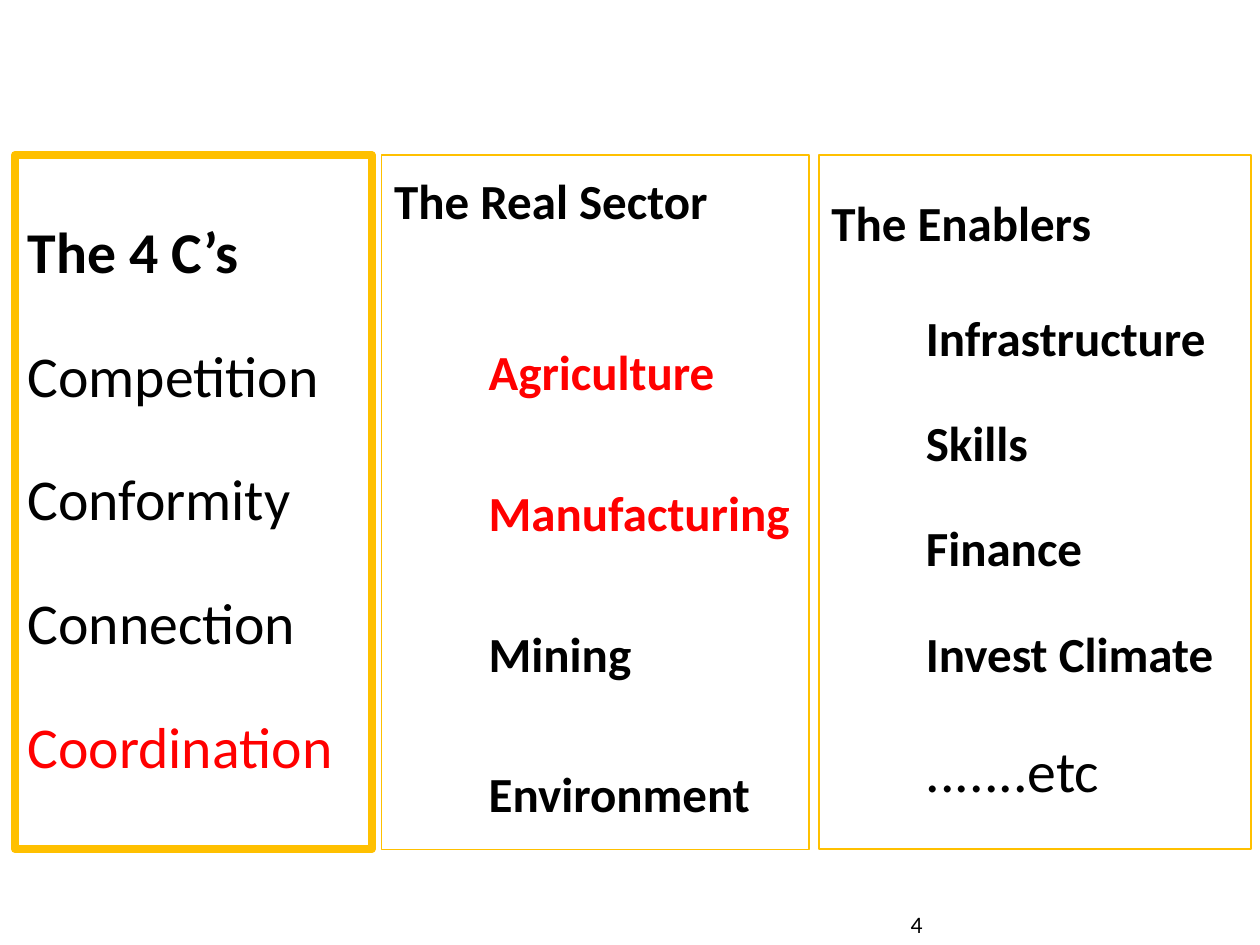
from pptx import Presentation
from pptx.dml.color import RGBColor
from pptx.enum import shapes, text
from pptx.util import Pt

COLORS = {"white": "FFFFFF", "gold": "FFC000", "black": "000000", "red": "FF0000"}
FONT = "Calibri"
TOP, HEIGHT = 88.56, 396.72
INDENT = 54

columns = [
    {"left": 8.64, "width": 203.76, "border": 4.5, "spacing": 0.9, "lines": [
        ("The 4 C’s", 33, True, "black", 0, 0),
        ("Competition", 33, False, "black", 0, 35),
        ("Conformity", 33, False, "black", 0, 35),
        ("Connection", 33, False, "black", 0, 35),
        ("Coordination", 33, False, "red", 0, 35)]},
    {"left": 218.16, "width": 244.08, "border": 0.75, "spacing": 0.8, "lines": [
        ("The Real Sector", 28, True, "black", 0, 0),
        ("Agriculture", 28, True, "red", INDENT, 71),
        ("Manufacturing", 28, True, "red", INDENT, 53.5),
        ("Mining", 28, True, "black", INDENT, 53.5),
        ("Environment", 28, True, "black", INDENT, 53.5)]},
    {"left": 468, "width": 246.96, "border": 1, "spacing": 0.9, "lines": [
        ("The Enablers", 28, True, "black", 0, 0),
        ("Infrastructure", 28, True, "black", INDENT, 35),
        ("Skills", 28, True, "black", INDENT, 30),
        ("Finance", 28, True, "black", INDENT, 30),
        ("Invest Climate", 28, True, "black", INDENT, 30),
        (".......etc", 33, False, "black", INDENT, 34)]},
]


def style(para, size, bold, color):
    for span in para.runs:
        span.font.name = FONT
        span.font.size = Pt(size)
        span.font.bold = bold
        span.font.color.rgb = RGBColor.from_string(COLORS[color])


deck = Presentation()
deck.slide_width, deck.slide_height = Pt(720), Pt(540)
page = deck.slides.add_slide(deck.slide_layouts[6])

number = page.shapes.add_textbox(Pt(513.36), Pt(516.24), Pt(175.68), Pt(37.44))
number.text_frame.word_wrap = True
number.text_frame.text = "4"
style(number.text_frame.paragraphs[0], 13.5, False, "black")

for column in columns:
    box = page.shapes.add_shape(
        shapes.MSO_SHAPE.RECTANGLE,
        Pt(column["left"]), Pt(TOP), Pt(column["width"]), Pt(HEIGHT))
    box.shadow.inherit = False
    box.fill.solid()
    box.fill.fore_color.rgb = RGBColor.from_string(COLORS["white"])
    box.line.color.rgb = RGBColor.from_string(COLORS["gold"])
    box.line.width = Pt(column["border"])
    frame = box.text_frame
    frame.word_wrap = True
    frame.vertical_anchor = text.MSO_ANCHOR.MIDDLE
    frame.text = "\n".join(line[0] for line in column["lines"])
    for para, line in zip(frame.paragraphs, column["lines"]):
        wording, size, bold, color, indent, gap = line
        para.alignment = text.PP_ALIGN.LEFT
        para.line_spacing = column["spacing"]
        para.space_before = Pt(gap)
        para._p.get_or_add_pPr().set("marL", str(Pt(indent)))
        style(para, size, bold, color)

deck.save("out.pptx")
